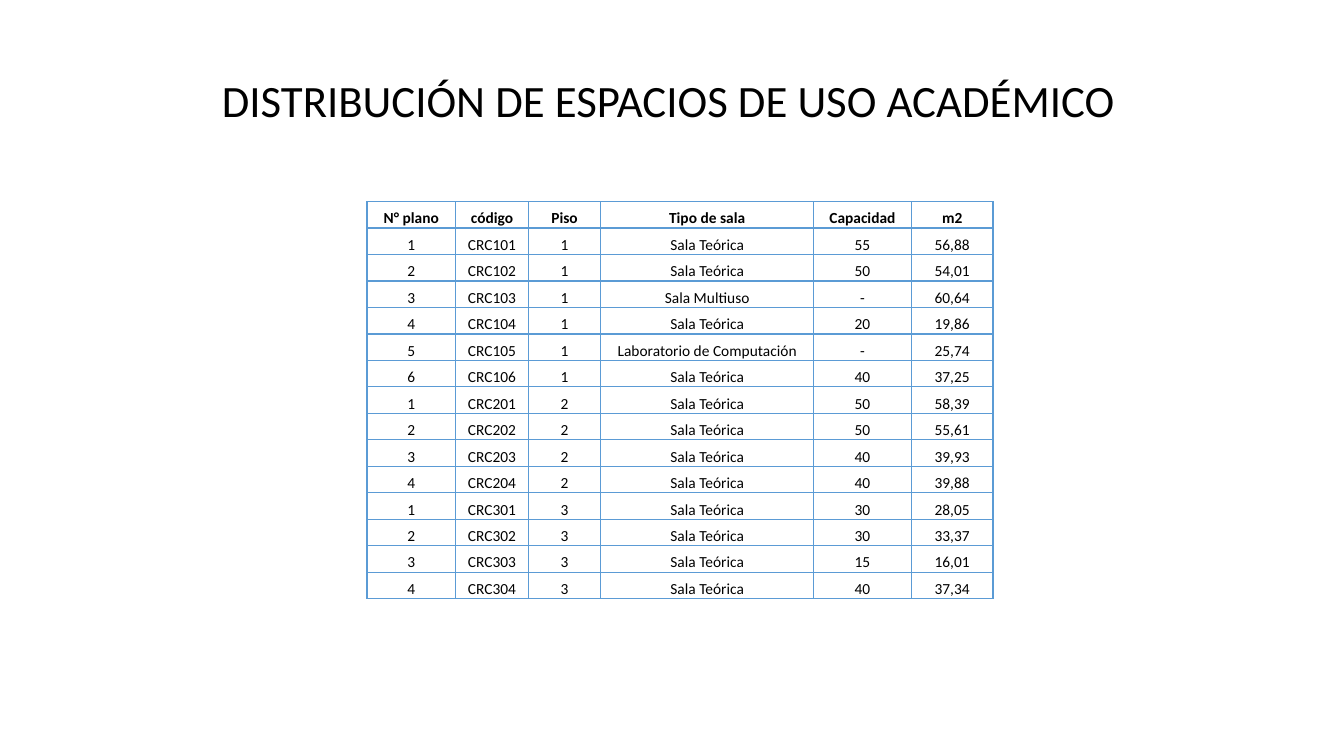
from pptx import Presentation
from pptx.dml.color import RGBColor
from pptx.enum.text import MSO_ANCHOR, PP_ALIGN
from pptx.oxml.ns import qn
from pptx.util import Inches, Pt
from lxml.etree import SubElement

BLACK = RGBColor(0x00, 0x00, 0x00)
BLUE = RGBColor(0x5B, 0x9B, 0xD5)
FONT = "Calibri"
TITLE = "DISTRIBUCIÓN DE ESPACIOS DE USO ACADÉMICO"
HEADS = ["N° plano", "código", "Piso", "Tipo de sala", "Capacidad", "m2"]
WIDTHS = [0.88, 0.72, 0.72, 2.11, 0.97, 0.81]
THEORY = "Sala Teórica"
FLOORS = {
    1: [
        (THEORY, "55", "56,88"),
        (THEORY, "50", "54,01"),
        ("Sala Multiuso", "-", "60,64"),
        (THEORY, "20", "19,86"),
        ("Laboratorio de Computación", "-", "25,74"),
        (THEORY, "40", "37,25"),
    ],
    2: [
        (THEORY, "50", "58,39"),
        (THEORY, "50", "55,61"),
        (THEORY, "40", "39,93"),
        (THEORY, "40", "39,88"),
    ],
    3: [
        (THEORY, "30", "28,05"),
        (THEORY, "30", "33,37"),
        (THEORY, "15", "16,01"),
        (THEORY, "40", "37,34"),
    ],
}


def list_rooms():
    return [
        [str(plan), f"CRC{floor}{plan:02}", str(floor), *room]
        for floor, rooms in FLOORS.items()
        for plan, room in enumerate(rooms, 1)
    ]


def style_text(frame, size, bold, align):
    para = frame.paragraphs[0]
    para.alignment = align
    font = para.runs[0].font
    font.name, font.size, font.bold = FONT, Pt(size), bold
    font.color.rgb = BLACK


def add_title(slide):
    title = slide.shapes.title
    title.left, title.top = Inches(2.1), Inches(0.63)
    title.width, title.height = Inches(9.13), Inches(0.65)
    frame = title.text_frame
    frame.text = TITLE
    frame.word_wrap = True
    frame.vertical_anchor = MSO_ANCHOR.TOP
    style_text(frame, 32, False, PP_ALIGN.LEFT)
    para = frame.paragraphs[0]
    para.line_spacing = 1.07
    para.space_before, para.space_after = Pt(0), Pt(8)


def add_border(cell):
    props = cell._tc.get_or_add_tcPr()
    for side in ("a:lnL", "a:lnR", "a:lnT", "a:lnB"):
        line = SubElement(props, qn(side), w=str(Pt(1)))
        fill = SubElement(line, qn("a:solidFill"))
        SubElement(fill, qn("a:srgbClr"), val=str(BLUE))


def fill_cell(cell, text, bold):
    cell.text_frame.text = text
    cell.vertical_anchor = MSO_ANCHOR.BOTTOM
    cell.margin_left = cell.margin_right = cell.margin_top = Inches(0.01)
    cell.margin_bottom = 0
    style_text(cell.text_frame, 11, bold, PP_ALIGN.CENTER)
    add_border(cell)
    cell.fill.background()


def add_rooms(slide):
    rows = [HEADS] + list_rooms()
    table = slide.shapes.add_table(
        len(rows), len(HEADS),
        Inches(3.64), Inches(2), Inches(sum(WIDTHS)), Inches(3.94),
    ).table
    table.first_row = table.horz_banding = False
    for column, width in zip(table.columns, WIDTHS):
        column.width = Inches(width)
    for r, row in enumerate(rows):
        for c, text in enumerate(row):
            fill_cell(table.cell(r, c), text, r == 0)


def main():
    deck = Presentation()
    deck.slide_width, deck.slide_height = Inches(13.33), Inches(7.5)
    slide = deck.slides.add_slide(deck.slide_layouts.get_by_name("Title Only"))
    add_rooms(slide)
    add_title(slide)
    deck.save("out.pptx")


if __name__ == "__main__":
    main()
